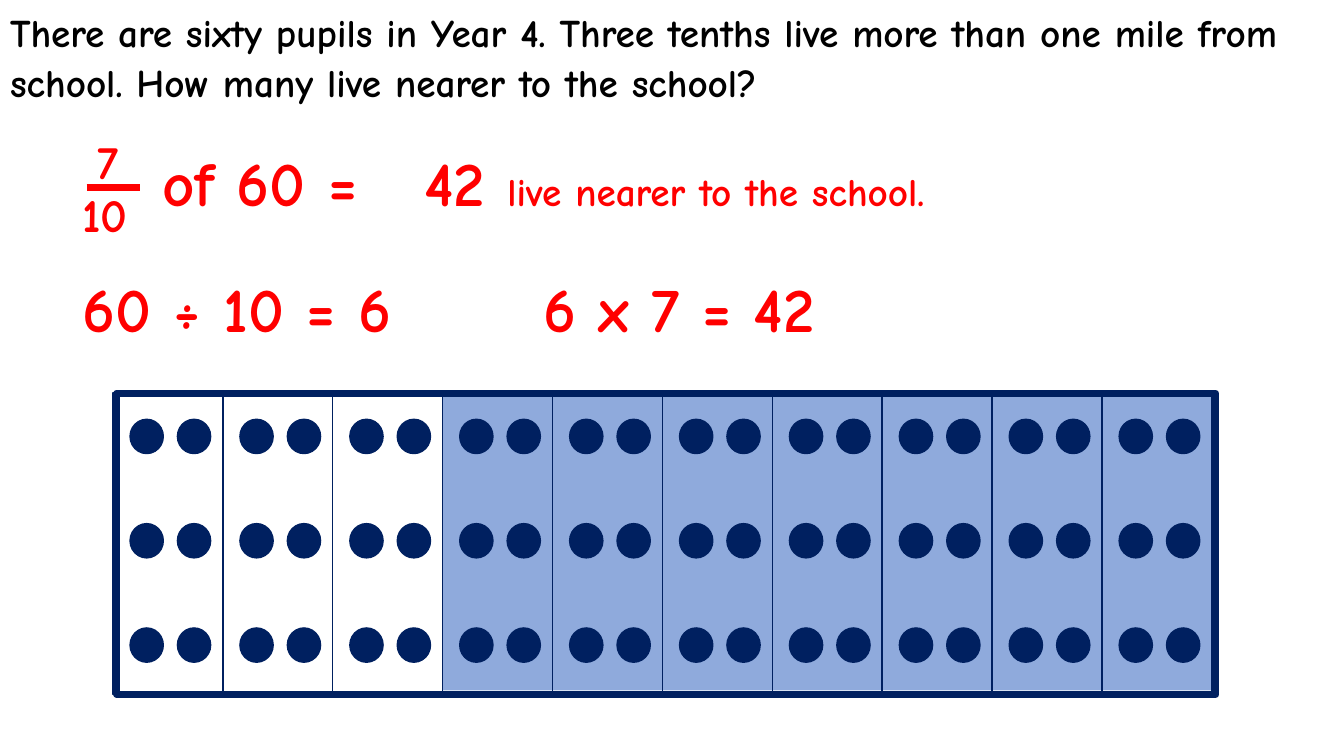
from dataclasses import dataclass

import pptx
import pptx.dml.color
import pptx.enum.shapes
import pptx.enum.text
import pptx.oxml
import pptx.util
from pptx.util import Inches

SHAPE = pptx.enum.shapes.MSO_SHAPE


@dataclass(frozen=True)
class Theme:
    font: str = "Comic Neue"
    question: str = "000000"
    working: str = "FF0000"
    navy: str = "002060"
    shade: str = "8FAADC"
    body_size: float = 28
    fraction_size: float = 33.6
    sum_size: float = 44.9
    thick: float = 5
    thin: float = 1


THEME = Theme()

# Bar model: tenths of the year group, six pupils in each
TENTHS, NEAR_TENTHS = 10, 7
DOT_COLUMNS, DOT_ROWS = 2, 3
BAR_LEFT, BAR_TOP, BAR_HEIGHT = 1.12, 3.9, 2.99
TENTH_WIDTH = 1.09


def rgb(value):
    return pptx.dml.color.RGBColor.from_string(value)


def style_font(font, size, color):
    font.name = THEME.font
    font.size = pptx.util.Pt(size)
    font.bold = True
    font.color.rgb = rgb(color)


def add_question(slide, text):
    title = slide.shapes.title
    title.left, title.top = Inches(0), Inches(0)
    title.width, title.height = Inches(13.33), Inches(1.08)
    frame = title.text_frame
    frame.text = text
    frame.word_wrap = True
    frame.auto_size = pptx.enum.text.MSO_AUTO_SIZE.NONE
    frame.vertical_anchor = pptx.enum.text.MSO_ANCHOR.TOP
    paragraph = frame.paragraphs[0]
    paragraph.alignment = pptx.enum.text.PP_ALIGN.LEFT
    paragraph.line_spacing = 1.07
    paragraph.space_before = pptx.util.Pt(0)
    paragraph.space_after = pptx.util.Pt(8)
    style_font(paragraph.font, THEME.body_size, THEME.question)


def add_working(shapes, text, left, top, width, height=0.86, size=THEME.sum_size):
    box = shapes.add_textbox(Inches(left), Inches(top), Inches(width), Inches(height))
    box.text_frame.word_wrap = True
    paragraph = box.text_frame.paragraphs[0]
    paragraph.add_run().text = text
    style_font(paragraph.font, size, THEME.working)
    return paragraph


def add_shape(shapes, kind, left, top, width, height, fill=None, line=None, weight=THEME.thin):
    shape = shapes.add_shape(kind, Inches(left), Inches(top), Inches(width), Inches(height))
    shape.shadow.inherit = False
    if fill:
        shape.fill.solid()
        shape.fill.fore_color.rgb = rgb(fill)
    else:
        shape.fill.background()
    if line:
        shape.line.color.rgb = rgb(line)
        shape.line.width = pptx.util.Pt(weight)
    else:
        shape.line.fill.background()


def add_fraction(slide, numerator, denominator):
    shapes = slide.shapes.add_group_shape().shapes
    add_working(shapes, numerator, 0.87, 1.27, 0.44, 0.67, THEME.fraction_size)
    add_working(shapes, denominator, 0.72, 1.79, 0.79, 0.67, THEME.fraction_size)
    bar = shapes.add_connector(pptx.enum.shapes.MSO_CONNECTOR.STRAIGHT,
                               Inches(0.86), Inches(1.86), Inches(1.39), Inches(1.86))
    bar.line.color.rgb = rgb(THEME.working)
    bar.line.width = pptx.util.Pt(THEME.thick)
    properties = bar._element.spPr
    properties.append(pptx.oxml.parse_xml(
        '<a:effectLst xmlns:a="http://schemas.openxmlformats.org/drawingml/2006/main"/>'))


def add_bar_model(slide):
    shapes = slide.shapes.add_group_shape().shapes

    # Shaded tenths and outer frame
    near_left = BAR_LEFT + (TENTHS - NEAR_TENTHS) * TENTH_WIDTH
    add_shape(shapes, SHAPE.RECTANGLE, near_left, 3.93, NEAR_TENTHS * TENTH_WIDTH, 2.92,
              fill=THEME.shade)
    add_shape(shapes, SHAPE.RECTANGLE, 1.16, BAR_TOP, TENTHS * TENTH_WIDTH, BAR_HEIGHT,
              line=THEME.navy, weight=THEME.thick)

    # Each tenth with its pupils
    for tenth in range(TENTHS):
        left = BAR_LEFT + tenth * TENTH_WIDTH
        add_shape(shapes, SHAPE.RECTANGLE, left, BAR_TOP, TENTH_WIDTH, BAR_HEIGHT,
                  line=THEME.navy)
        for row in range(DOT_ROWS):
            for column in range(DOT_COLUMNS):
                add_shape(shapes, SHAPE.OVAL, left + 0.17 + column * 0.47,
                          4.16 + row * 1.035, 0.33, 0.34, fill=THEME.navy, line=THEME.navy)


def main():
    presentation = pptx.Presentation()
    presentation.slide_width = Inches(13.33)
    presentation.slide_height = Inches(7.5)
    slide = presentation.slides.add_slide(presentation.slide_layouts.get_by_name("Title Only"))

    add_question(slide, "There are sixty pupils in Year 4. Three tenths live more than one "
                        "mile from school. How many live nearer to the school?")

    # Answer and working
    add_fraction(slide, "7", "10")
    add_working(slide.shapes, "of 60 =", 1.51, 1.38, 3.15)
    add_working(slide.shapes, "60 ÷ 10 = 6", 0.72, 2.63, 5.43)
    add_working(slide.shapes, "6 x 7 = 42", 5.29, 2.63, 5.43)
    answer = add_working(slide.shapes, "42 ", 4.11, 1.38, 8.8)
    ending = answer.add_run()
    ending.text = "live nearer to the school."
    ending.font.size = pptx.util.Pt(THEME.body_size)

    add_bar_model(slide)
    presentation.save("out.pptx")


if __name__ == "__main__":
    main()
